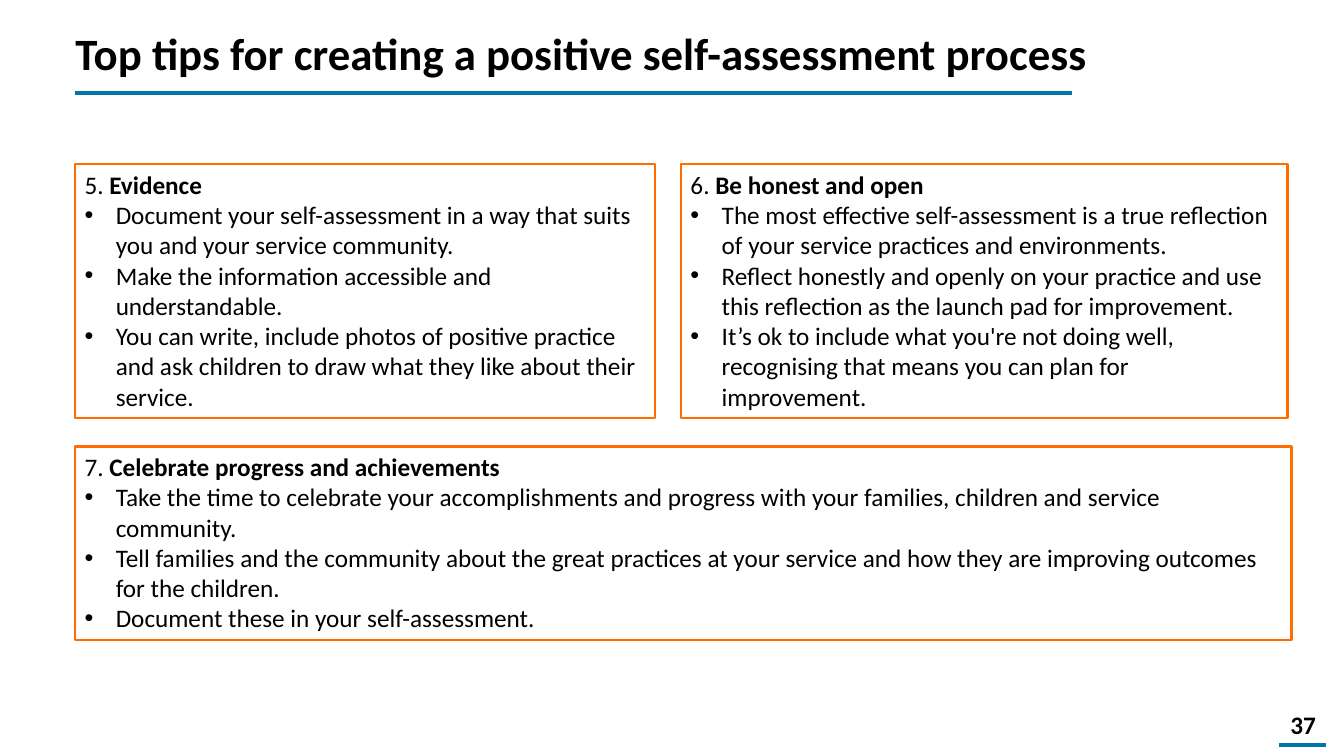
from lxml.etree import SubElement
from pptx import Presentation
from pptx.dml.color import RGBColor
from pptx.enum.shapes import MSO_CONNECTOR
from pptx.enum.text import MSO_ANCHOR, MSO_AUTO_SIZE, PP_ALIGN
from pptx.oxml.ns import qn
from pptx.util import Pt

PX = 9144
BLACK = RGBColor(0x00, 0x00, 0x00)
BLUE = RGBColor(0x00, 0x76, 0xAB)
ORANGE = RGBColor(0xFF, 0x6C, 0x00)

BODY = {"name": "Calibri", "size": Pt(18), "bold": False}
STRONG = {**BODY, "bold": True}
TITLE = {**STRONG, "size": Pt(32)}
GROWING = {"word_wrap": True, "auto_size": MSO_AUTO_SIZE.SHAPE_TO_FIT_TEXT}
CENTRED = {"word_wrap": True, "vertical_anchor": MSO_ANCHOR.MIDDLE}
BULLET_INDENT = 31

LEFT = 74
TOP_ROW, TOP_HEIGHT = 163, 252
TIPS = [
    ((LEFT, TOP_ROW, 576, TOP_HEIGHT), 5, "Evidence", [
        "Document your self-assessment in a way that suits you and your service community.",
        "Make the information accessible and understandable.",
        "You can write, include photos of positive practice and ask children to draw what they like about their service.",
    ]),
    ((675, TOP_ROW, 602, TOP_HEIGHT), 6, "Be honest and open", [
        "The most effective self-assessment is a true reflection of your service practices and environments.",
        "Reflect honestly and openly on your practice and use this reflection as the launch pad for improvement.",
        "It’s ok to include what you're not doing well, recognising that means you can plan for improvement.",
    ]),
    ((LEFT, 443, 1207, 192), 7, "Celebrate progress and achievements", [
        "Take the time to celebrate your accomplishments and progress with your families, children and service community.",
        "Tell families and the community about the great practices at your service and how they are improving outcomes for the children.",
        "Document these in your self-assessment.",
    ]),
]


def apply_format(target, values):
    for name, value in values.items():
        setattr(target, name, value)


def add_run(paragraph, text, font_values):
    run = paragraph.add_run()
    run.text = text
    apply_format(run.font, font_values)
    run.font.color.rgb = BLACK


def add_text_box(slide, box, frame_values):
    shape = slide.shapes.add_textbox(*(length * PX for length in box))
    apply_format(shape.text_frame, frame_values)
    return shape


def add_rule(slide, left, top, width):
    connector = slide.shapes.add_connector(
        MSO_CONNECTOR.STRAIGHT, left * PX, top * PX, (left + width) * PX, top * PX)
    connector.line.color.rgb = BLUE
    connector.line.width = Pt(3)
    SubElement(connector._element.spPr, qn("a:effectLst"))


def add_bullet(paragraph):
    properties = paragraph._p.get_or_add_pPr()
    properties.set("marL", str(BULLET_INDENT * PX))
    properties.set("indent", str(-BULLET_INDENT * PX))
    SubElement(properties, qn("a:buFont"), typeface="Arial")
    SubElement(properties, qn("a:buChar"), char="•")


def add_tip(slide, box, number, heading, points):
    shape = add_text_box(slide, box, GROWING)
    shape.line.color.rgb = ORANGE
    shape.line.width = Pt(1.5)
    paragraph = shape.text_frame.paragraphs[0]
    add_run(paragraph, f"{number}. ", BODY)
    add_run(paragraph, heading, STRONG)
    for point in points:
        paragraph = shape.text_frame.add_paragraph()
        add_bullet(paragraph)
        add_run(paragraph, point, BODY)


def add_title(slide, box, text):
    left, top, width, height = box
    shape = add_text_box(slide, box, GROWING)
    add_run(shape.text_frame.paragraphs[0], text, TITLE)
    add_rule(slide, left + 9, top + height + 7, 989)


def add_page_number(slide, box, number):
    left, top, width, height = box
    shape = add_text_box(slide, box, CENTRED)
    paragraph = shape.text_frame.paragraphs[0]
    paragraph.alignment = PP_ALIGN.RIGHT
    add_run(paragraph, str(number), STRONG)
    add_rule(slide, left + 9, top + height, width - 9)


def main():
    presentation = Presentation()
    presentation.slide_width = 1333 * PX
    presentation.slide_height = 750 * PX
    slide = presentation.slides.add_slide(presentation.slide_layouts[6])
    for tip in TIPS:
        add_tip(slide, *tip)
    add_title(slide, (65, 21, 1176, 64), "Top tips for creating a positive self-assessment process")
    add_page_number(slide, (1260, 699, 55, 40), 37)
    presentation.save("out.pptx")


if __name__ == "__main__":
    main()
